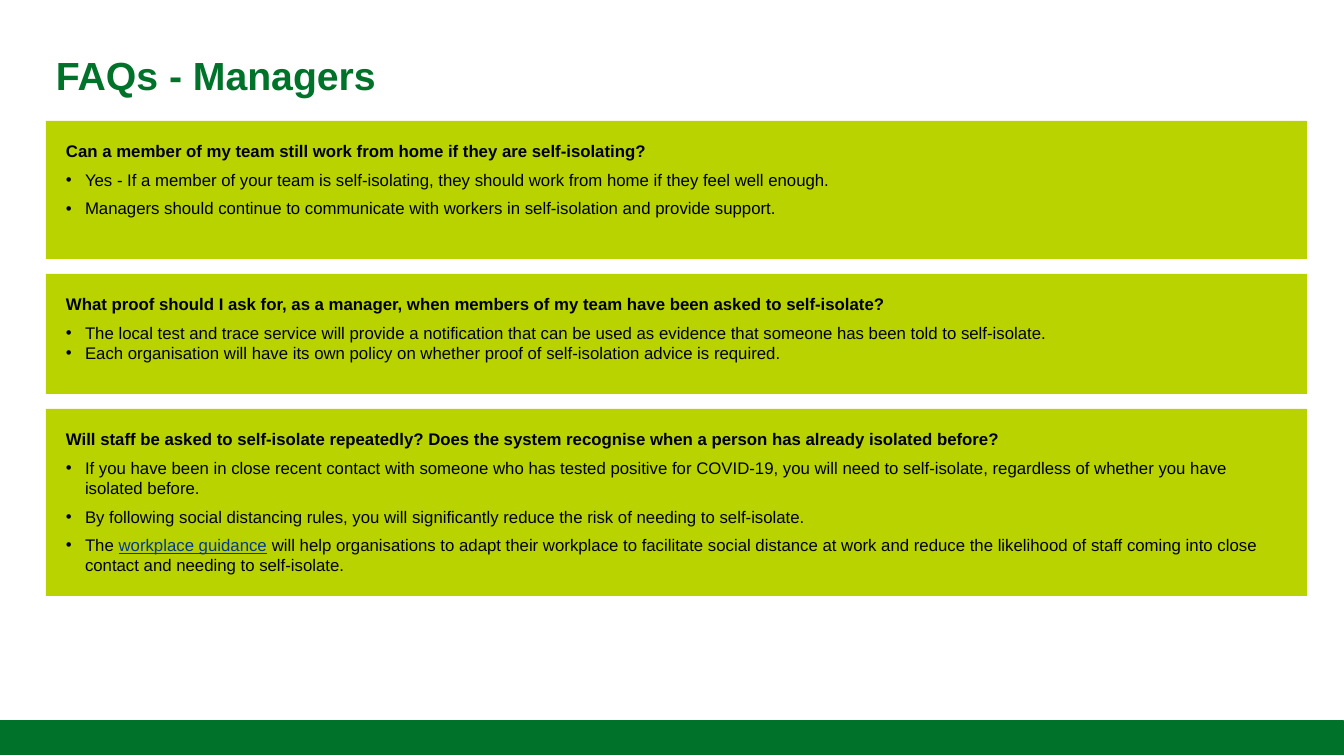
from pptx import Presentation
from pptx import util as u
from pptx.dml.color import RGBColor
from pptx.enum import shapes, text
from lxml import etree

PX = 914400 / 100.8
GREEN, LIME, BLACK, BLUE = "007229", "B9D300", "000000", "003893"


def px(n):
    return u.Emu(round(n * PX))


def write(para, words, size=12, color=BLACK, bold=False, line=False):
    run = para.add_run()
    run.text = words
    font = run.font
    font.name, font.size = "Arial", u.Pt(size)
    font.bold, font.underline = bold, line
    font.color.rgb = RGBColor.from_string(color)


deck = Presentation()
deck.slide_width, deck.slide_height = px(1344), px(756)
slide = deck.slides.add_slide(deck.slide_layouts[6])
RECT = shapes.MSO_SHAPE.RECTANGLE

# Footer band
band = slide.shapes.add_shape(RECT, 0, px(721), px(1344), px(34))
band.shadow.inherit = False
band.fill.solid()
band.fill.fore_color.rgb = RGBColor.from_string(GREEN)
band.line.color.rgb = RGBColor.from_string(GREEN)
band.line.width = u.Pt(0.75)

# Title
LEFT, WIDTH, GAP = 46, 1261, 15
title = slide.shapes.add_textbox(px(LEFT), px(30), px(WIDTH), px(89))
title.text_frame.word_wrap = True
title.text_frame.vertical_anchor = text.MSO_ANCHOR.MIDDLE
write(title.text_frame.paragraphs[0], "FAQs - Managers", size=28, color=GREEN, bold=True)

# Panels: height, space after bullets, question, answers as lists of runs
panels = [
    (138, 6, "Can a member of my team still work from home if they are self-isolating?", [
        ["Yes - If a member of your team is self-isolating, they should work from home "
         "if they feel well enough."],
        ["Managers should continue to communicate with workers in self-isolation "
         "and provide support."],
    ]),
    (120, 0, "What proof should I ask for, as a manager, when members of my team "
     "have been asked to self-isolate?", [
        ["The local test and trace service will provide a notification that can be used "
         "as evidence that someone has been told to self-isolate."],
        ["Each organisation will have its own policy on whether proof of "
         "self-isolation advice is required."],
    ]),
    (187, 6, "Will staff be asked to self-isolate repeatedly? Does the system recognise "
     "when a person has already isolated before?", [
        ["If you have been in close recent contact with someone who has tested positive "
         "for COVID-19, you will need to self-isolate, regardless of whether you have "
         "isolated before."],
        ["By following social distancing rules, you will significantly reduce the risk "
         "of needing to self-isolate."],
        ["The ", "workplace guidance",
         " will help organisations to adapt their workplace to facilitate social distance "
         "at work and reduce the likelihood of staff coming into close contact and "
         "needing to self-isolate."],
    ]),
]

top = 121
for height, after, question, answers in panels:
    box = slide.shapes.add_shape(RECT, px(LEFT), px(top), px(WIDTH), px(height))
    box.shadow.inherit = False
    box.fill.solid()
    box.fill.fore_color.rgb = RGBColor.from_string(LIME)
    box.line.fill.background()
    frame = box.text_frame
    frame.word_wrap = True
    frame.vertical_anchor = text.MSO_ANCHOR.TOP
    frame.margin_left = frame.margin_right = px(20)
    frame.margin_top = frame.margin_bottom = px(20)

    head = frame.paragraphs[0]
    head.alignment = text.PP_ALIGN.LEFT
    head.space_after = u.Pt(6)
    write(head, question, bold=True)

    for runs in answers:
        para = frame.add_paragraph()
        para.alignment = text.PP_ALIGN.LEFT
        para.space_after = u.Pt(after)
        props = para._p.get_or_add_pPr()
        props.set("marL", str(px(19)))
        props.set("indent", str(-px(19)))
        ns = props.nsmap["a"]
        etree.SubElement(props, f"{{{ns}}}buFont", typeface="Arial")
        etree.SubElement(props, f"{{{ns}}}buChar", char="•")
        for i, words in enumerate(runs):
            link = i == 1
            write(para, words, color=BLUE if link else BLACK, line=link)
    top += height + GAP

deck.save("out.pptx")
